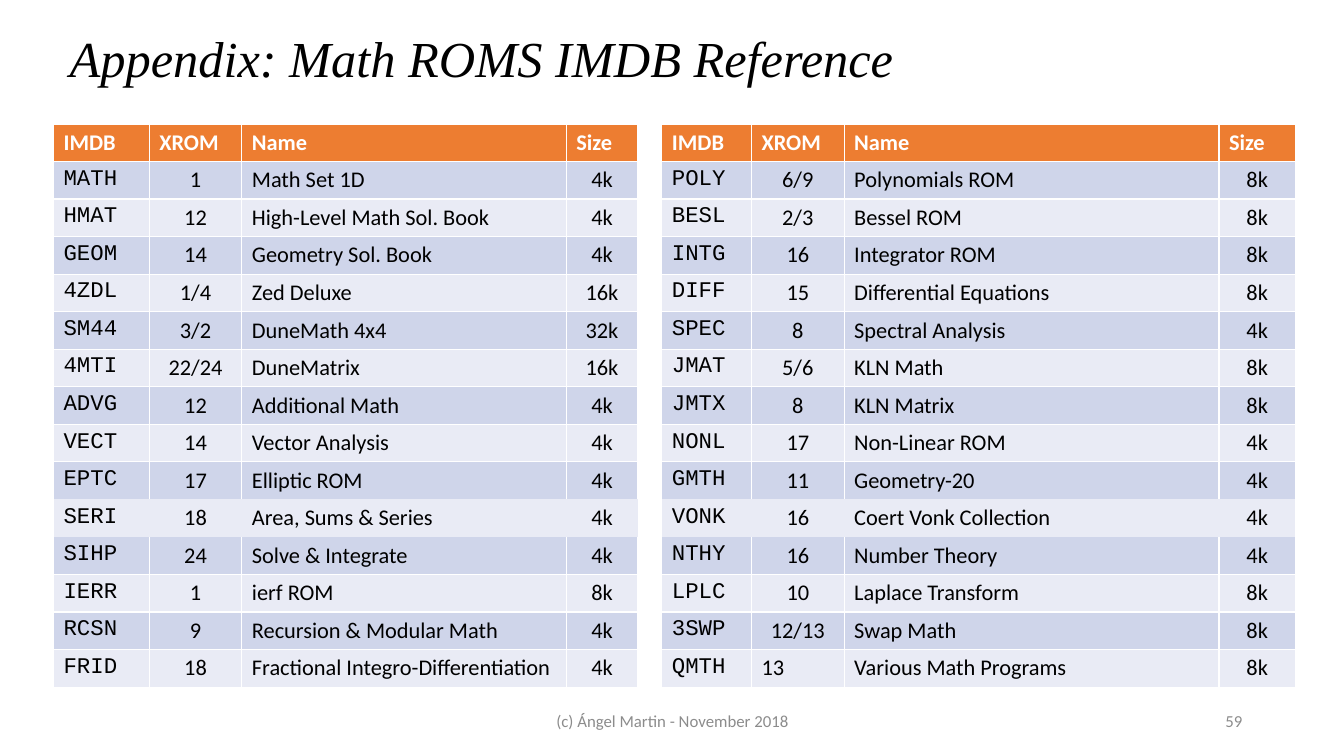
from lxml import etree
from pptx import Presentation
from pptx.dml.color import RGBColor
from pptx.enum.text import MSO_ANCHOR, MSO_AUTO_SIZE, PP_ALIGN
from pptx.oxml.ns import qn
from pptx.util import Inches, Pt

LEFT, CENTER, RIGHT = PP_ALIGN.LEFT, PP_ALIGN.CENTER, PP_ALIGN.RIGHT
TOP, MIDDLE = MSO_ANCHOR.TOP, MSO_ANCHOR.MIDDLE
NO_AUTOFIT = MSO_AUTO_SIZE.NONE

WHITE = RGBColor(0xFF, 0xFF, 0xFF)
BLACK = RGBColor(0x00, 0x00, 0x00)
GREY = RGBColor(0x8C, 0x8C, 0x8C)
ORANGE = RGBColor(0xED, 0x7D, 0x31)
BAND_DARK = RGBColor(0xCF, 0xD5, 0xEA)
BAND_LIGHT = RGBColor(0xE9, 0xEB, 0xF5)

SLIDE_W, SLIDE_H = Inches(13.33), Inches(7.5)

TITLE_FONT = {"name": "Times New Roman", "size": Pt(36), "bold": False, "italic": True}
HEADER_FONT = {"name": "Calibri", "size": Pt(16), "bold": True}
BODY_FONT = {"name": "Calibri", "size": Pt(16), "bold": False}
CODE_FONT = {"name": "Courier New", "size": Pt(16), "bold": False}
FOOTER_FONT = {"name": "Calibri", "size": Pt(12)}

HEADINGS = ["IMDB", "XROM", "Name", "Size"]
COLUMN_WEIGHTS = [95, 92, 322, 71, 23, 89, 92, 372, 76]
GAP_COLUMN = 4
BORDERLESS = "SERI"
LEFT_ALIGNED_XROM = "QMTH"

LEFT_ROMS = [
    ("MATH", "1", "Math Set 1D", "4k"),
    ("HMAT", "12", "High-Level Math Sol. Book", "4k"),
    ("GEOM", "14", "Geometry Sol. Book", "4k"),
    ("4ZDL", "1/4", "Zed Deluxe", "16k"),
    ("SM44", "3/2", "DuneMath 4x4", "32k"),
    ("4MTI", "22/24", "DuneMatrix", "16k"),
    ("ADVG", "12", "Additional Math", "4k"),
    ("VECT", "14", "Vector Analysis", "4k"),
    ("EPTC", "17", "Elliptic ROM", "4k"),
    ("SERI", "18", "Area, Sums & Series", "4k"),
    ("SIHP", "24", "Solve & Integrate", "4k"),
    ("IERR", "1", "ierf ROM", "8k"),
    ("RCSN", "9", "Recursion & Modular Math", "4k"),
    ("FRID", "18", "Fractional Integro-Differentiation", "4k"),
]
RIGHT_ROMS = [
    ("POLY", "6/9", "Polynomials ROM", "8k"),
    ("BESL", "2/3", "Bessel ROM", "8k"),
    ("INTG", "16", "Integrator ROM", "8k"),
    ("DIFF", "15", "Differential Equations", "8k"),
    ("SPEC", "8", "Spectral Analysis", "4k"),
    ("JMAT", "5/6", "KLN Math", "8k"),
    ("JMTX", "8", "KLN Matrix", "8k"),
    ("NONL", "17", "Non-Linear ROM", "4k"),
    ("GMTH", "11", "Geometry-20", "4k"),
    ("VONK", "16", "Coert Vonk Collection", "4k"),
    ("NTHY", "16", "Number Theory", "4k"),
    ("LPLC", "10", "Laplace Transform", "8k"),
    ("3SWP", "12/13", "Swap Math", "8k"),
    ("QMTH", "13", "Various Math Programs", "8k"),
]


def percent_box(left, top, width, height):
    return (int(SLIDE_W * left / 100), int(SLIDE_H * top / 100),
            int(SLIDE_W * width / 100), int(SLIDE_H * height / 100))


def write(frame, text, font, color, align):
    paragraph = frame.paragraphs[0]
    paragraph.alignment = align
    run = paragraph.add_run()
    run.text = text
    for attribute, value in font.items():
        setattr(run.font, attribute, value)
    run.font.color.rgb = color
    return paragraph


def add_title(slide, box, text):
    title = slide.shapes.title
    title.left, title.top, title.width, title.height = box
    frame = title.text_frame
    frame.auto_size = NO_AUTOFIT
    frame.word_wrap = True
    frame.vertical_anchor = TOP
    write(frame, text, TITLE_FONT, BLACK, LEFT).line_spacing = 0.9


def add_footer(slide, box, text, align):
    frame = slide.shapes.add_textbox(*box).text_frame
    frame.word_wrap = True
    frame.vertical_anchor = MIDDLE
    write(frame, text, FOOTER_FONT, GREY, align)


def clear_borders(cell, sides):
    properties = cell._tc.get_or_add_tcPr()
    for position, side in enumerate(sides):
        line = etree.Element(qn(f"a:ln{side}"))
        etree.SubElement(line, qn("a:noFill"))
        properties.insert(position, line)


def fill_cell(cell, text, row, column, code):
    cell.fill.solid()
    if row == 0:
        cell.fill.fore_color.rgb = ORANGE
        write(cell.text_frame, text, HEADER_FONT, WHITE, LEFT)
        return
    cell.fill.fore_color.rgb = BAND_DARK if row % 2 else BAND_LIGHT
    heading = HEADINGS[column % (GAP_COLUMN + 1)]
    centred = heading == "Size" or (heading == "XROM" and code != LEFT_ALIGNED_XROM)
    font = CODE_FONT if heading == "IMDB" else BODY_FONT
    write(cell.text_frame, text, font, BLACK, CENTER if centred else LEFT)


def add_rom_table(slide, box):
    rows = [[*HEADINGS, "", *HEADINGS]]
    rows += [[*left, "", *right] for left, right in zip(LEFT_ROMS, RIGHT_ROMS)]
    table = slide.shapes.add_table(len(rows), len(COLUMN_WEIGHTS), *box).table
    width, height = box[2:]
    for column, weight in zip(table.columns, COLUMN_WEIGHTS):
        column.width = int(width * weight / sum(COLUMN_WEIGHTS))
    for table_row in table.rows:
        table_row.height = int(height / len(rows))
    borderless_row = [row[0] for row in rows].index(BORDERLESS)
    open_sides = {borderless_row - 1: "B", borderless_row: "LRTB", borderless_row + 1: "T"}
    for r, row in enumerate(rows):
        for c, text in enumerate(row):
            cell = table.cell(r, c)
            if c == GAP_COLUMN:
                cell.fill.background()
                cell.margin_top = cell.margin_bottom = 0
            else:
                code = row[0] if c < GAP_COLUMN else row[GAP_COLUMN + 1]
                fill_cell(cell, text, r, c, code)
            clear_borders(cell, open_sides.get(r, ""))


def main():
    deck = Presentation()
    deck.slide_width, deck.slide_height = SLIDE_W, SLIDE_H
    slide = deck.slides.add_slide(deck.slide_layouts[5])
    add_footer(slide, percent_box(33.16, 92.67, 33.76, 5.33),
               "(c) Ángel Martin - November 2018", CENTER)
    add_footer(slide, percent_box(70.67, 92.67, 22.5, 5.33), "59", RIGHT)
    add_rom_table(slide, percent_box(3.98, 16.4, 92.35, 74.5))
    add_title(slide, percent_box(4.43, 3.87, 86.27, 12.53),
              "Appendix: Math ROMS IMDB Reference")
    deck.save("out.pptx")


if __name__ == "__main__":
    main()
